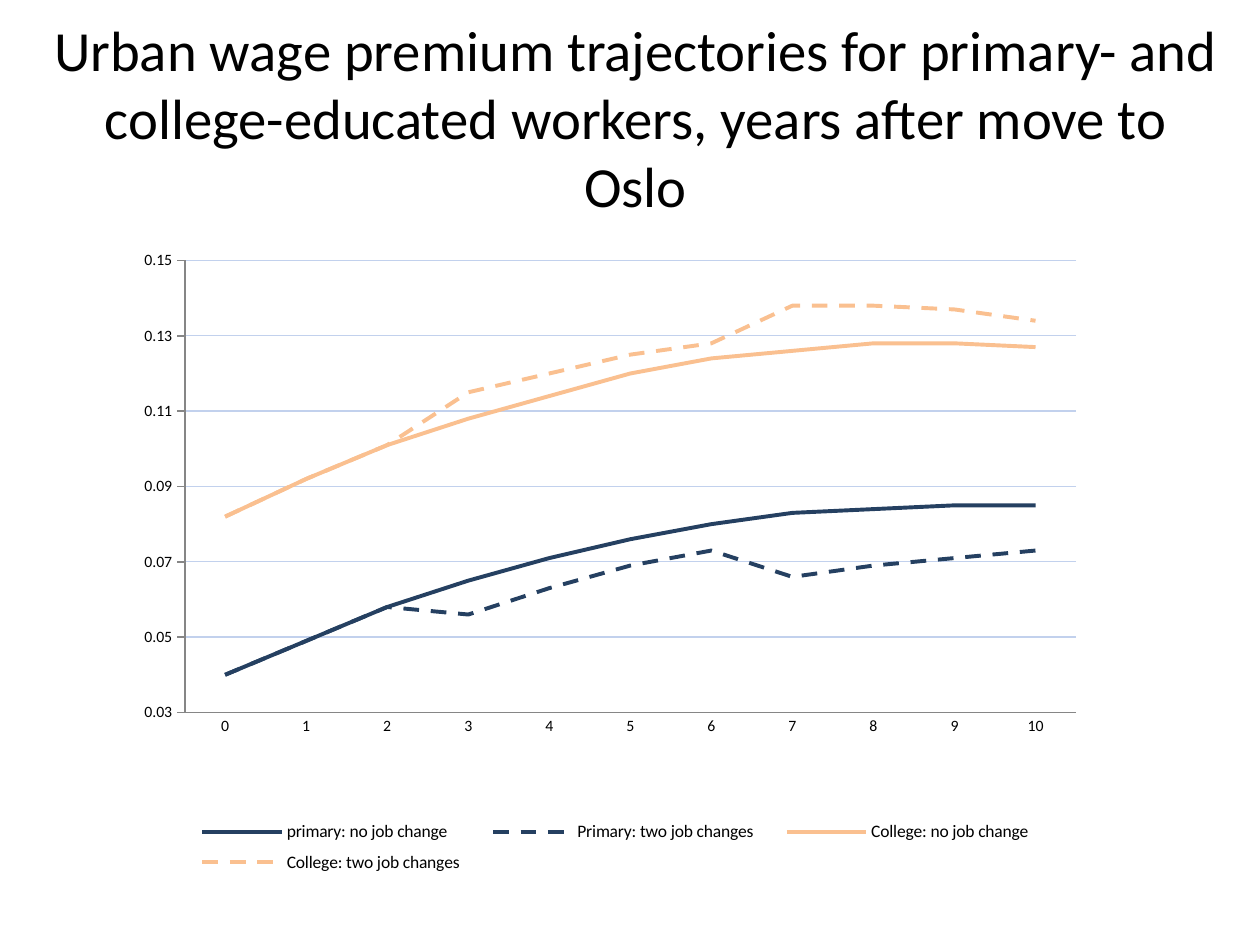
from lxml import etree
from pptx import Presentation
from pptx.chart import data
from pptx.dml.color import RGBColor
from pptx.enum import chart as ch, dml, text
from pptx.oxml import ns
from pptx.util import Inches, Pt

COLORS = {"text": "000000", "primary": "254061", "college": "FAC090",
          "grid": "C2D1ED", "axis": "868686"}
FONT = "Calibri"
TITLE = ("Urban wage premium trajectories for primary- and college-educated "
         "workers, years after move to Oslo")
TRAJECTORIES = [  # name, colour, dashed, premium in years 0 to 10
    ("primary: no job change", "primary", False,
     (0.04, 0.049, 0.058, 0.065, 0.071, 0.076, 0.08, 0.083, 0.084, 0.085, 0.085)),
    ("Primary: two job changes", "primary", True,
     (0.04, 0.049, 0.058, 0.056, 0.063, 0.069, 0.073, 0.066, 0.069, 0.071, 0.073)),
    ("College: no job change", "college", False,
     (0.082, 0.092, 0.101, 0.108, 0.114, 0.12, 0.124, 0.126, 0.128, 0.128, 0.127)),
    ("College: two job changes", "college", True,
     (0.082, 0.092, 0.101, 0.115, 0.12, 0.125, 0.128, 0.138, 0.138, 0.137, 0.134)),
]


def rgb(name):
    return RGBColor.from_string(COLORS[name])


def set_all(target, **values):
    for key, value in values.items():
        setattr(target, key, value)


def format_font(font, size):
    set_all(font, name=FONT, size=Pt(size))
    font.color.rgb = rgb("text")


def format_line(line, color, width):
    line.color.rgb = rgb(color)
    line.width = Pt(width)


def place_in_chart(parent, index, box, inner=False):
    """Give a chart part a manual layout, as fractions of the chart."""
    for old in parent.findall(ns.qn("c:layout")):
        parent.remove(old)
    layout = etree.Element(ns.qn("c:layout"))
    manual = etree.SubElement(layout, ns.qn("c:manualLayout"))
    settings = [("layoutTarget", "inner")] if inner else []
    settings += [("xMode", "edge"), ("yMode", "edge"), *zip("xywh", box)]
    for tag, value in settings:
        etree.SubElement(manual, ns.qn(f"c:{tag}")).set("val", str(value))
    parent.insert(index, layout)


def add_title(slide, left, top, width, height):
    title = slide.shapes.title
    set_all(title, left=left, top=top, width=width, height=height)
    frame = title.text_frame
    set_all(frame, text=TITLE, word_wrap=True,
            vertical_anchor=text.MSO_ANCHOR.MIDDLE)
    paragraph = frame.paragraphs[0]
    paragraph.alignment = text.PP_ALIGN.CENTER
    format_font(paragraph.runs[0].font, 32.4)


def format_axes(chart):
    years, premium = chart.category_axis, chart.value_axis
    set_all(years, major_tick_mark=ch.XL_TICK_MARK.NONE, has_major_gridlines=False)
    set_all(premium, major_tick_mark=ch.XL_TICK_MARK.OUTSIDE,
            minimum_scale=0.03, maximum_scale=0.15, major_unit=0.02,
            has_major_gridlines=True)
    format_line(premium.major_gridlines.format.line, "grid", 0.75)
    set_all(premium.tick_labels, number_format="0.00", number_format_is_linked=False)
    for axis in (years, premium):
        axis.minor_tick_mark = ch.XL_TICK_MARK.NONE
        format_font(axis.tick_labels.font, 9)
        format_line(axis.format.line, "axis", 1)


def add_trajectory_chart(slide, left, top, width, height):
    chart_data = data.CategoryChartData(number_format="0.000")
    chart_data.categories = [str(year) for year in range(11)]
    for name, _, _, premiums in TRAJECTORIES:
        chart_data.add_series(name, premiums)
    chart = slide.shapes.add_chart(ch.XL_CHART_TYPE.LINE, left, top, width,
                                   height, chart_data).chart
    set_all(chart, has_title=False, has_legend=True)
    format_font(chart.font, 10)
    chart.plots[0].vary_by_categories = False
    for trajectory, (_, color, dashed, _) in zip(chart.plots[0].series, TRAJECTORIES):
        trajectory.smooth = False
        trajectory.marker.style = ch.XL_MARKER_STYLE.NONE
        format_line(trajectory.format.line, color, 2.25)
        if dashed:
            trajectory.format.line.dash_style = dml.MSO_LINE.DASH
    format_axes(chart)

    legend = chart.legend
    set_all(legend, position=ch.XL_LEGEND_POSITION.BOTTOM, include_in_layout=False)
    format_font(legend.font, 10)
    plot_area = chart.plots[0]._element.getparent()
    place_in_chart(plot_area, 0, (0.09, 0.04, 0.89, 0.69), inner=True)
    place_in_chart(legend._element, 1, (0.08, 0.88, 0.88, 0.11))


def main():
    prs = Presentation()
    set_all(prs, slide_width=Inches(10), slide_height=Inches(7.5))
    slide = prs.slides.add_slide(prs.slide_layouts[5])
    add_title(slide, Inches(0.28), Inches(0.3), Inches(9.53), Inches(1.25))
    add_trajectory_chart(slide, Inches(0.75), Inches(1.86), Inches(7.95), Inches(5.2))
    prs.save("out.pptx")


if __name__ == "__main__":
    main()
